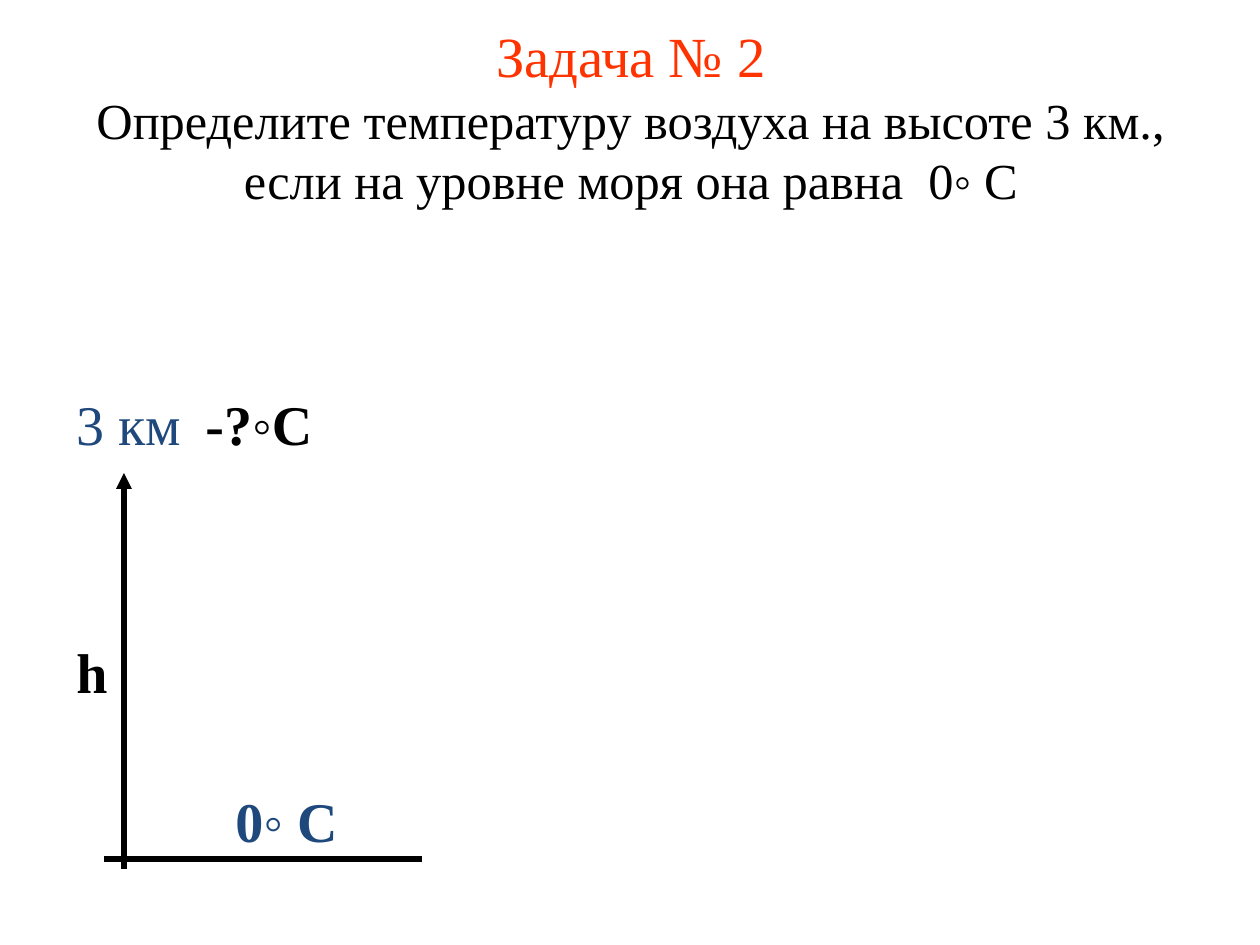
from pptx import Presentation
from pptx.dml.color import RGBColor
from pptx.enum.shapes import MSO_CONNECTOR as Connector
from pptx.enum.text import MSO_ANCHOR as Anchor, MSO_AUTO_SIZE as AutoSize, PP_ALIGN as Align
from pptx.oxml.ns import qn
from pptx.util import Emu, Pt
from lxml.etree import SubElement

EMU_PER_PX = 914400 / 126
COLORS = {"heading": "FF3300", "ink": "000000", "label": "1F497D"}


def px(length):
    return Emu(round(length * EMU_PER_PX))


class TaskSlide:
    font_name = "Times New Roman"
    label_size = 32
    line_width = 3

    def __init__(self, slide):
        self.slide = slide

    def text_box(self, box):
        shape = self.slide.shapes.add_textbox(*map(px, box))
        return shape.text_frame

    def add_run(self, paragraph, text, size, color, bold=False):
        run = paragraph.add_run()
        run.text = text
        run.font.name = self.font_name
        run.font.size = Pt(size)
        run.font.bold = bold
        run.font.color.rgb = RGBColor.from_string(COLORS[color])

    def title(self, box, heading, question):
        frame = self.text_box(box)
        frame.word_wrap = True
        frame.vertical_anchor = Anchor.MIDDLE
        paragraph = frame.paragraphs[0]
        paragraph.alignment = Align.CENTER
        self.add_run(paragraph, heading, 32.4, "heading")
        paragraph.add_line_break()
        self.add_run(paragraph, question, 28.8, "ink")

    def label(self, box, text, color, bold=True):
        frame = self.text_box(box)
        frame.word_wrap = False
        frame.auto_size = AutoSize.SHAPE_TO_FIT_TEXT
        self.add_run(frame.paragraphs[0], text, self.label_size, color, bold)

    def line(self, start, end, arrow=False):
        connector = self.slide.shapes.add_connector(
            Connector.STRAIGHT, *map(px, (*start, *end)))
        connector.line.width = Pt(self.line_width)
        connector.line.color.rgb = RGBColor.from_string(COLORS["ink"])
        properties = connector._element.spPr
        if arrow:
            SubElement(properties.find(qn("a:ln")), qn("a:tailEnd"), type="triangle")
        SubElement(properties, qn("a:effectLst"))


def main():
    presentation = Presentation()
    presentation.slide_width = px(1260)
    presentation.slide_height = px(945)
    task = TaskSlide(presentation.slides.add_slide(presentation.slide_layouts[6]))

    task.title((64, 26, 1134, 179), "Задача № 2",
               "Определите температуру воздуха на высоте 3 км., "
               "если на уровне моря она равна  0◦ С")
    task.label((64, 383, 131, 80), "3 км", "label", bold=False)
    task.label((193, 383, 139, 80), "-?◦С", "ink")
    task.label((223, 780, 134, 80), "0◦ С", "label")
    task.label((64, 631, 57, 80), "h", "ink")
    task.line((104, 859), (422, 859))
    task.line((124, 869), (124, 473), arrow=True)

    presentation.save("out.pptx")


if __name__ == "__main__":
    main()
